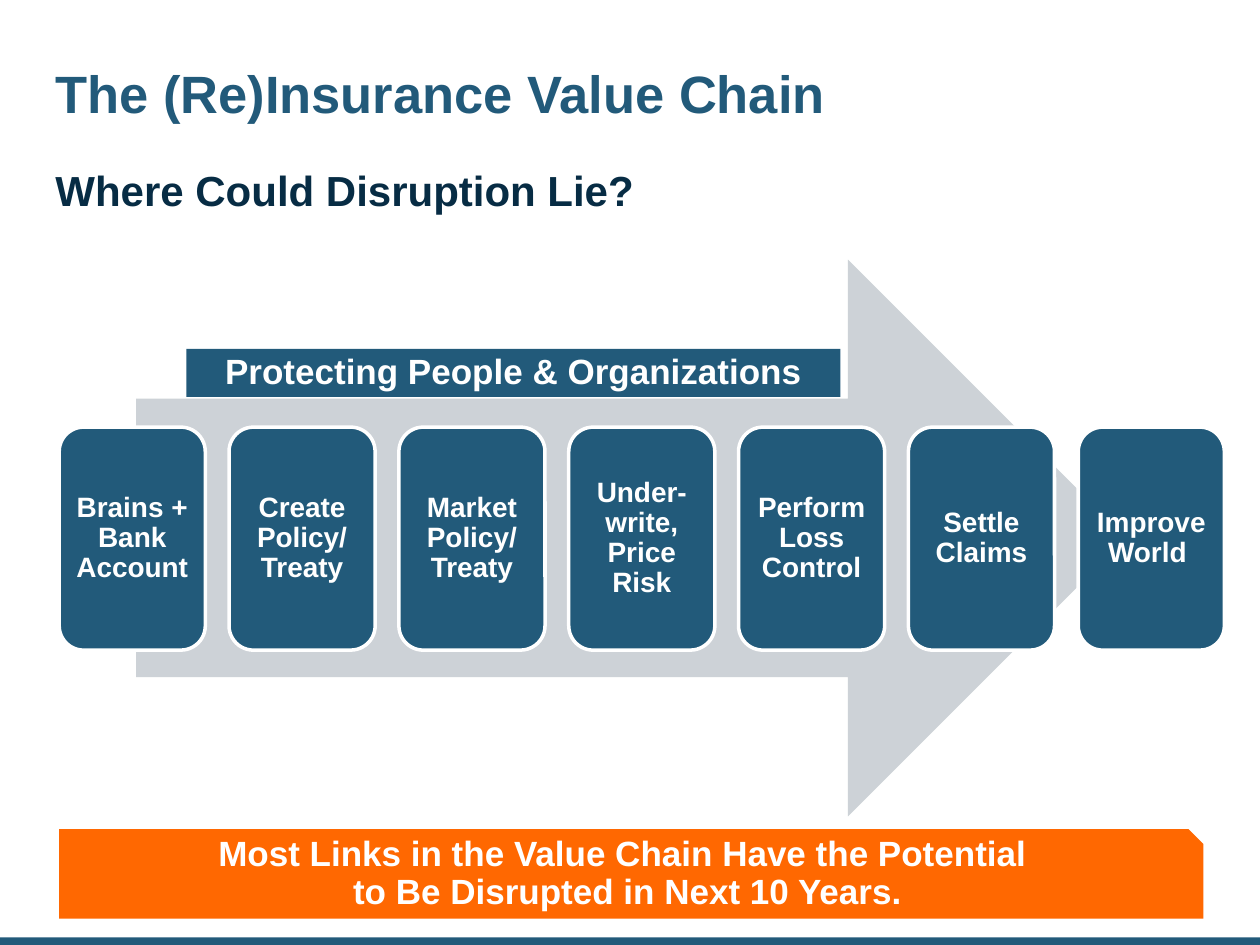
import pptx
import pptx.util
import pptx.dml.color
import pptx.enum.shapes
import pptx.enum.text

KIND = pptx.enum.shapes.MSO_SHAPE
ALIGN = pptx.enum.text.PP_ALIGN
ANCHOR = pptx.enum.text.MSO_ANCHOR

WIDTH, HEIGHT = pptx.util.Inches(10), pptx.util.Inches(7.5)
BLUE, NAVY, GREY, ORANGE, WHITE = "225A7A", "072C44", "CDD2D7", "FF6801", "FFFFFF"
LINKS = [
    "Brains + Bank Account",
    "Create Policy/ Treaty",
    "Market Policy/ Treaty",
    "Under-write, Price Risk",
    "Perform Loss Control",
    "Settle Claims",
    "Improve World ",
]
FIRST, STEP = 4.7, 13.48


def color(code):
    return pptx.dml.color.RGBColor.from_string(code)


def place(left, top, width, height):
    """Turn percent shares of the slide into lengths."""
    sides = (WIDTH, HEIGHT, WIDTH, HEIGHT)
    return [int(side * share / 100) for side, share in zip(sides, (left, top, width, height))]


def apply(item, values):
    for name, value in values.items():
        setattr(item, name, value)


def write(shape, lines, size, ink=WHITE, align=ALIGN.CENTER, anchor=ANCHOR.MIDDLE,
          pads=(0.05, 0.05, 0.05, 0.05)):
    """Fill a shape with bold lines; pads are left, top, right, bottom inches."""
    frame = shape.text_frame
    left, top, right, bottom = map(pptx.util.Inches, pads)
    apply(frame, {"word_wrap": True, "vertical_anchor": anchor,
                  "margin_left": left, "margin_top": top,
                  "margin_right": right, "margin_bottom": bottom})
    for row, line in enumerate(lines):
        para = frame.add_paragraph() if row else frame.paragraphs[0]
        apply(para, {"alignment": align, "line_spacing": 0.9})
        run = para.add_run()
        run.text = line
        apply(run.font, {"name": "Arial", "size": pptx.util.Pt(size), "bold": True})
        run.font.color.rgb = color(ink)


def draw(slide, kind, area, fill, edge=None):
    shape = slide.shapes.add_shape(kind, *place(*area))
    shape.shadow.inherit = False
    shape.fill.solid()
    shape.fill.fore_color.rgb = color(fill)
    if edge:
        shape.line.color.rgb = color(edge)
        shape.line.width = pptx.util.Pt(2)
    else:
        shape.line.fill.background()
    return shape


def label(slide, area, text, size, ink, anchor):
    box = slide.shapes.add_textbox(*place(*area))
    write(box, [text], size, ink, ALIGN.LEFT, anchor)


def main():
    deck = pptx.Presentation()
    apply(deck, {"slide_width": WIDTH, "slide_height": HEIGHT})
    slide = deck.slides.add_slide(deck.slide_layouts[6])

    draw(slide, KIND.RECTANGLE, (0, 99.2, 100, 0.8), BLUE)
    label(slide, (3.9, 3.33, 92.5, 13.87), "The (Re)Insurance Value Chain",
          30, BLUE, ANCHOR.MIDDLE)
    label(slide, (3.9, 17.33, 92.5, 5.73), "Where Could Disruption Lie?",
          24, NAVY, ANCHOR.TOP)

    draw(slide, KIND.RIGHT_ARROW, (10.8, 27.47, 78.6, 58.93), GREY)
    for col, text in enumerate(LINKS):
        link = draw(slide, KIND.ROUNDED_RECTANGLE,
                    (FIRST + col * STEP, 45.2, 11.6, 23.6), BLUE, WHITE)
        write(link, [text], 16, pads=(0.07, 0.07, 0.07, 0.07))

    banner = draw(slide, KIND.RECTANGLE, (14.8, 36.93, 51.9, 5.07), BLUE)
    write(banner, ["Protecting People & Organizations"], 20)
    claim = draw(slide, KIND.SNIP_1_RECTANGLE, (FIRST, 87.73, 90.8, 9.47), ORANGE)
    write(claim, ["Most Links in the Value Chain Have the Potential ",
                  "to Be Disrupted in Next 10 Years."],
          20, pads=(0.1, 0.05, 0.1, 0.1))

    deck.save("out.pptx")


if __name__ == "__main__":
    main()
